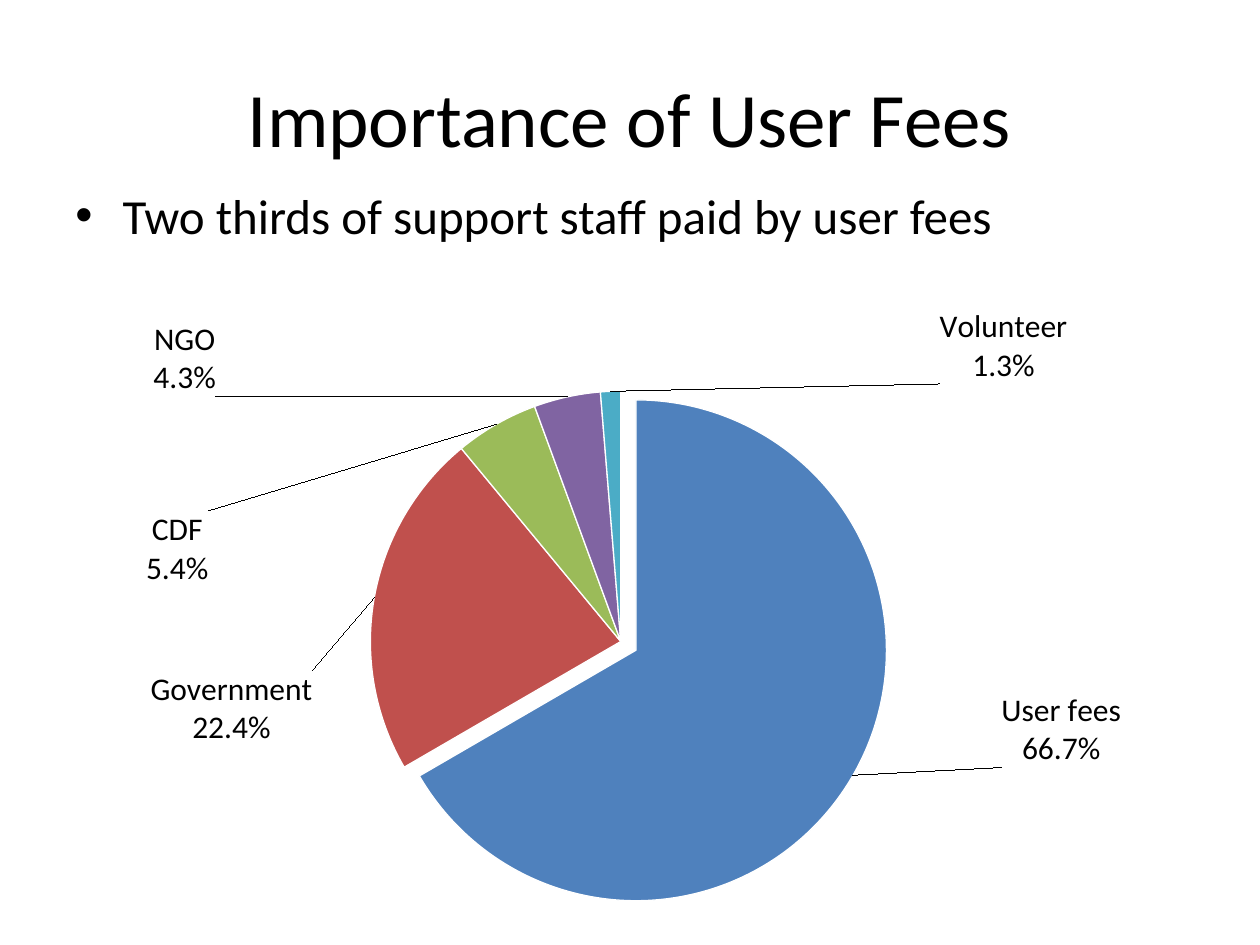
from pptx import Presentation
from pptx.chart.data import CategoryChartData
from pptx.dml.color import RGBColor
from pptx.enum.chart import XL_CHART_TYPE as ChartType, XL_LABEL_POSITION as LabelPosition
from pptx.enum.text import MSO_ANCHOR as Anchor, PP_ALIGN as Align
from pptx.oxml import parse_xml
from pptx.oxml.ns import nsdecls, qn
from pptx.util import Pt

FONT = "Calibri"
COLORS = {
    "text": "000000",
    "gap": "FFFFFF",
    "User fees": "4F81BD",
    "Government": "C0504D",
    "CDF": "9BBB59",
    "NGO": "8064A2",
    "Volunteer": "4BACC6",
}
SHARES = {"User fees": 66.7, "Government": 22.4, "CDF": 5.4, "NGO": 4.3, "Volunteer": 1.3}
LABEL_OFFSETS = [(0.13, -0.14), (-0.05, 0.24), (-0.26, 0.27), (-0.32, 0.01), (0.36, 0)]
NUMBER_FORMAT = '0.0"%"'


def style_font(font, size):
    """Apply the slide's typeface and text colour at a given size."""
    font.name = FONT
    font.size = Pt(size)
    font.color.rgb = RGBColor.from_string(COLORS["text"])


def add_title(slide, text):
    """Place and format the title placeholder."""
    title = slide.shapes.title
    title.left, title.top, title.width, title.height = Pt(36), Pt(21.6), Pt(648), Pt(90)
    title.text_frame.text = text
    title.text_frame.vertical_anchor = Anchor.MIDDLE
    paragraph = title.text_frame.paragraphs[0]
    paragraph.alignment = Align.CENTER
    style_font(paragraph.font, 44)


def add_bullet(slide, text):
    """Add a text box with one bulleted line."""
    box = slide.shapes.add_textbox(Pt(36), Pt(102.2), Pt(648), Pt(48))
    box.text_frame.word_wrap = True
    paragraph = box.text_frame.paragraphs[0]
    paragraph.text = text
    style_font(paragraph.font, 28)
    properties = paragraph._p.get_or_add_pPr()
    properties.set("marL", str(Pt(27)))
    properties.set("indent", str(-Pt(27)))
    properties.insert(0, parse_xml(f'<a:buFont {nsdecls("a")} typeface="Arial"/>'))
    properties.insert(1, parse_xml(f'<a:buChar {nsdecls("a")} char="•"/>'))


def set_plot_layout(chart, left, top, width, height):
    """Fix the inner plot area as fractions of the chart."""
    plot_area = chart._chartSpace.find(".//" + qn("c:plotArea"))
    for layout in plot_area.findall(qn("c:layout")):
        plot_area.remove(layout)
    plot_area.insert(0, parse_xml(
        f'<c:layout {nsdecls("c")}><c:manualLayout><c:layoutTarget val="inner"/>'
        '<c:xMode val="edge"/><c:yMode val="edge"/>'
        f'<c:x val="{left}"/><c:y val="{top}"/><c:w val="{width}"/><c:h val="{height}"/>'
        '</c:manualLayout></c:layout>'))


def make_label(index, x, y):
    """Return a category and value label moved from its default place."""
    return parse_xml(
        f'<c:dLbl {nsdecls("c")}><c:idx val="{index}"/>'
        f'<c:layout><c:manualLayout><c:x val="{x}"/><c:y val="{y}"/></c:manualLayout></c:layout>'
        f"<c:numFmt formatCode='{NUMBER_FORMAT}' sourceLinked='0'/>"
        '<c:dLblPos val="outEnd"/><c:showLegendKey val="0"/><c:showVal val="1"/>'
        '<c:showCatName val="1"/><c:showSerName val="0"/><c:showPercent val="0"/>'
        '<c:showBubbleSize val="0"/><c:separator>\n</c:separator></c:dLbl>')


def add_labels(series):
    """Label every slice outside the pie, with leader lines."""
    labels = series.data_labels
    labels.show_value = True
    labels.show_category_name = True
    labels.number_format = NUMBER_FORMAT
    labels.number_format_is_linked = False
    labels.position = LabelPosition.OUTSIDE_END
    style_font(labels.font, 18)
    element = labels._element
    for index, (x, y) in enumerate(LABEL_OFFSETS):
        element.insert(index, make_label(index, x, y))
    for leader in element.findall(qn("c:showLeaderLines")):
        element.remove(leader)
    element.append(parse_xml(f'<c:separator {nsdecls("c")}>\n</c:separator>'))
    element.append(parse_xml(f'<c:showLeaderLines {nsdecls("c")} val="1"/>'))


def add_pie(slide):
    """Add the pie of funding shares with its first slice pulled out."""
    data = CategoryChartData()
    data.categories = list(SHARES)
    data.add_series("Series 1", list(SHARES.values()))
    chart = slide.shapes.add_chart(
        ChartType.PIE, Pt(30.2), Pt(169.9), Pt(624.2), Pt(357.8), data).chart
    chart.has_title = False
    chart.has_legend = False
    style_font(chart.font, 18)
    set_plot_layout(chart, 0.29, 0.15, 0.46, 0.8)
    plot = chart.plots[0]
    plot.vary_by_categories = True
    series = plot.series[0]
    for index, category in enumerate(SHARES):
        slice_format = series.points[index].format
        slice_format.fill.solid()
        slice_format.fill.fore_color.rgb = RGBColor.from_string(COLORS[category])
        slice_format.line.color.rgb = RGBColor.from_string(COLORS["gap"])
        slice_format.line.width = Pt(0.75)
    first_slice = series._element.find(qn("c:dPt"))
    first_slice.find(qn("c:spPr")).addprevious(
        parse_xml(f'<c:explosion {nsdecls("c")} val="7"/>'))
    add_labels(series)


def main():
    """Build and save the slide."""
    presentation = Presentation()
    presentation.slide_width, presentation.slide_height = Pt(720), Pt(540)
    slide = presentation.slides.add_slide(presentation.slide_layouts[5])
    add_title(slide, "Importance of User Fees")
    add_bullet(slide, "Two thirds of support staff paid by user fees")
    add_pie(slide)
    presentation.save("out.pptx")


if __name__ == "__main__":
    main()
